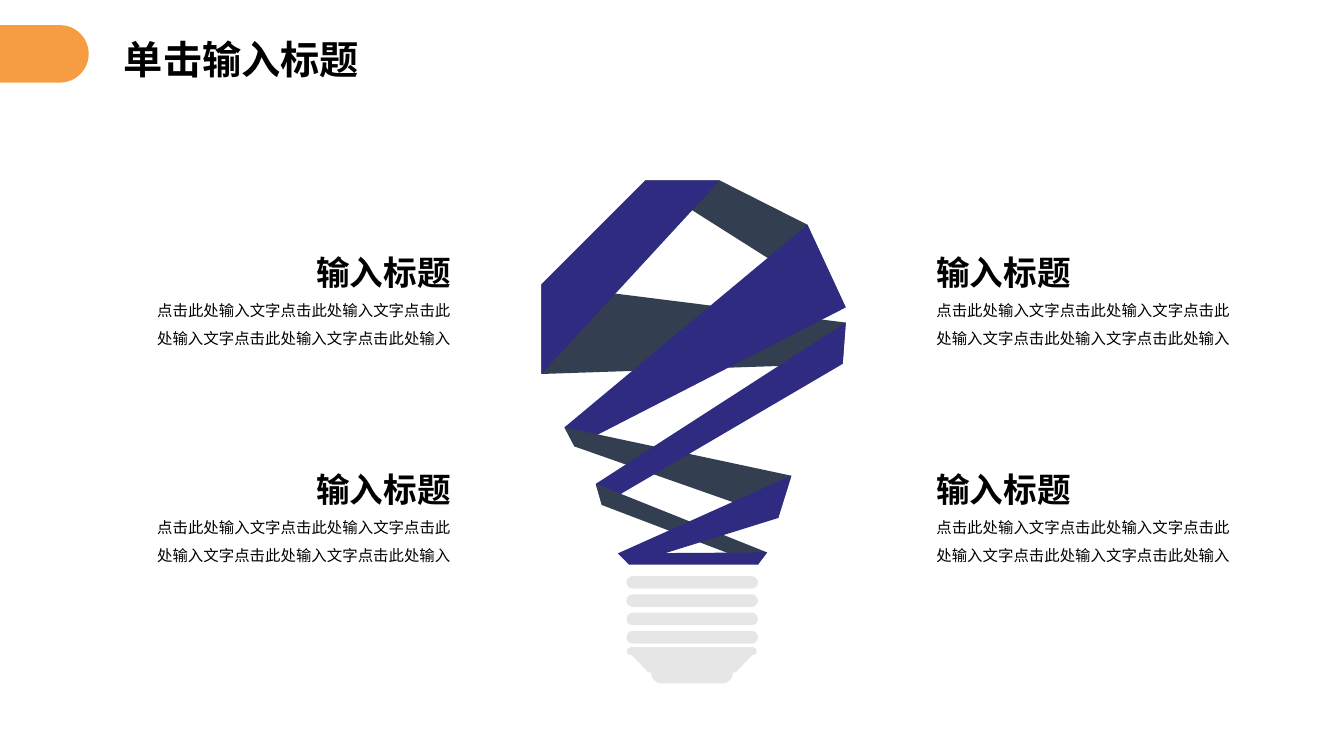
from dataclasses import dataclass

from lxml import etree
from pptx import Presentation
from pptx import util as u
from pptx.dml.color import RGBColor
from pptx.enum import shapes, text
from pptx.oxml import ns


@dataclass(frozen=True)
class Theme:
    ribbon_front: str = "2E2B81"
    ribbon_back: str = "333F50"
    base: str = "E6E6E6"
    accent: str = "F69D44"
    ink: str = "000000"
    latin: str = "Calibri"
    chinese: str = "Noto Sans CJK SC"
    title_size: int = 28
    heading_size: int = 24
    body_size: int = 11


THEME = Theme()
WIDTH, HEIGHT = u.Inches(13.333), u.Inches(7.5)

TITLE = "单击输入标题"
HEADING = "输入标题"
BODY = "点击此处输入文字" * 4 + "点击此处输入"

# Corners of the folded ribbon, in percent of the slide's width and height
CORNERS = {
    "crown_left": (48, 23.87), "crown_right": (53.55, 23.87),
    "shoulder": (60.08, 29.73), "cheek": (62.93, 40.67),
    "right_top": (62.93, 42.67), "right_bottom": (62.7, 48.13),
    "left_top": (40.28, 37.6), "left_bottom": (40.28, 49.47),
    "waist_top": (42, 56.53), "waist_bottom": (42.75, 59.07),
    "neck_top": (44.33, 64), "neck_bottom": (44.78, 66.8),
    "hip_top": (58.88, 62.93), "hip_bottom": (57.9, 68.53),
    "end_right": (57.08, 73.07), "foot_right": (56.4, 74.67),
    "end_left": (45.98, 73.2), "foot_left": (46.8, 74.67),
}

# Ribbon folds from back to front
FOLDS = [
    (THEME.ribbon_back, "crown_left cheek shoulder crown_right"),
    (THEME.ribbon_back, "left_top right_top right_bottom left_bottom"),
    (THEME.ribbon_front, "shoulder waist_top waist_bottom cheek"),
    (THEME.ribbon_back, "waist_top hip_top hip_bottom waist_bottom"),
    (THEME.ribbon_front, "right_top neck_top neck_bottom right_bottom"),
    (THEME.ribbon_back, "neck_top end_right foot_right neck_bottom"),
    (THEME.ribbon_front, "crown_left left_top left_bottom crown_right"),
    (THEME.ribbon_front, "foot_left hip_bottom hip_top end_left"),
    (THEME.ribbon_front, "end_left end_right foot_right foot_left"),
]


def across(percent):
    return round(WIDTH * percent / 100)


def down(percent):
    return round(HEIGHT * percent / 100)


def place(left, top, width, height):
    return across(left), down(top), across(width), down(height)


def paint(shape, color):
    shape.shadow.inherit = False
    shape.fill.solid()
    shape.fill.fore_color.rgb = RGBColor.from_string(color)
    shape.line.fill.background()


def add_pill(container, box, color):
    pill = container.add_shape(shapes.MSO_SHAPE.ROUNDED_RECTANGLE, *place(*box))
    pill.adjustments[0] = 0.5
    paint(pill, color)


def add_polygon(container, points, color):
    start, *others = [(across(x), down(y)) for x, y in points]
    builder = container.build_freeform(*start, scale=1.0)
    builder.add_line_segments(others, close=True)
    paint(builder.convert_to_shape(), color)


def format_run(run, size, bold, latin):
    run.font.size = u.Pt(size)
    run.font.bold = bold
    run.font.color.rgb = RGBColor.from_string(THEME.ink)
    run.font.name = latin
    east_asian = etree.SubElement(run.font._element, ns.qn("a:ea"))
    east_asian.set("typeface", THEME.chinese)


def add_title(slide):
    title = slide.shapes.title
    title.left, title.top, title.width, title.height = place(8.85, 4.67, 21.08, 6.27)
    frame = title.text_frame
    frame.text = TITLE
    frame.auto_size = text.MSO_AUTO_SIZE.SHAPE_TO_FIT_TEXT
    frame.vertical_anchor = text.MSO_ANCHOR.MIDDLE
    frame.margin_left = frame.margin_right = u.Inches(0.05)
    frame.margin_top = frame.margin_bottom = 0
    paragraph = frame.paragraphs[0]
    paragraph.alignment = text.PP_ALIGN.JUSTIFY
    format_run(paragraph.runs[0], THEME.title_size, True, THEME.chinese)


def add_caption(slide, left, top, alignment):
    frame = slide.shapes.add_textbox(*place(left, top, 23.78, 16.4)).text_frame
    frame.word_wrap = True
    frame.auto_size = text.MSO_AUTO_SIZE.SHAPE_TO_FIT_TEXT
    frame.text = f"{HEADING}\n{BODY}"
    styles = [(THEME.heading_size, True), (THEME.body_size, False)]
    for paragraph, (size, bold) in zip(frame.paragraphs, styles):
        paragraph.alignment = alignment
        paragraph.line_spacing = 1.5
        format_run(paragraph.runs[0], size, bold, THEME.latin)


def add_bulb(slide):
    bulb = slide.shapes.add_group_shape().shapes
    # Screw base: contact, cone, collar and evenly spaced threads
    add_pill(bulb, (48.45, 87.6, 6.08, 2.8), THEME.base)
    cone = [(46.95, 86.53), (56.03, 86.53), (54.75, 88.93), (48.23, 88.93)]
    add_polygon(bulb, cone, THEME.base)
    add_pill(bulb, (46.65, 85.6, 9.65, 1.07), THEME.base)
    for thread in range(4):
        add_pill(bulb, (46.61, 76.2 + 2.42 * thread, 9.79, 1.67), THEME.base)
    # Folded ribbon
    for color, names in FOLDS:
        add_polygon(bulb, [CORNERS[name] for name in names.split()], color)


def main():
    presentation = Presentation()
    presentation.slide_width, presentation.slide_height = WIDTH, HEIGHT
    slide = presentation.slides.add_slide(presentation.slide_layouts[5])

    # Header
    add_title(slide)
    add_pill(slide.shapes, (-2.7, 3.33, 9.3, 7.6), THEME.accent)

    # Light bulb
    add_bulb(slide)

    # Captions on both sides
    sides = [(68.93, text.PP_ALIGN.LEFT), (10.5, text.PP_ALIGN.RIGHT)]
    for left, alignment in sides:
        for top in (30, 58.67):
            add_caption(slide, left, top, alignment)

    presentation.save("out.pptx")


if __name__ == "__main__":
    main()
